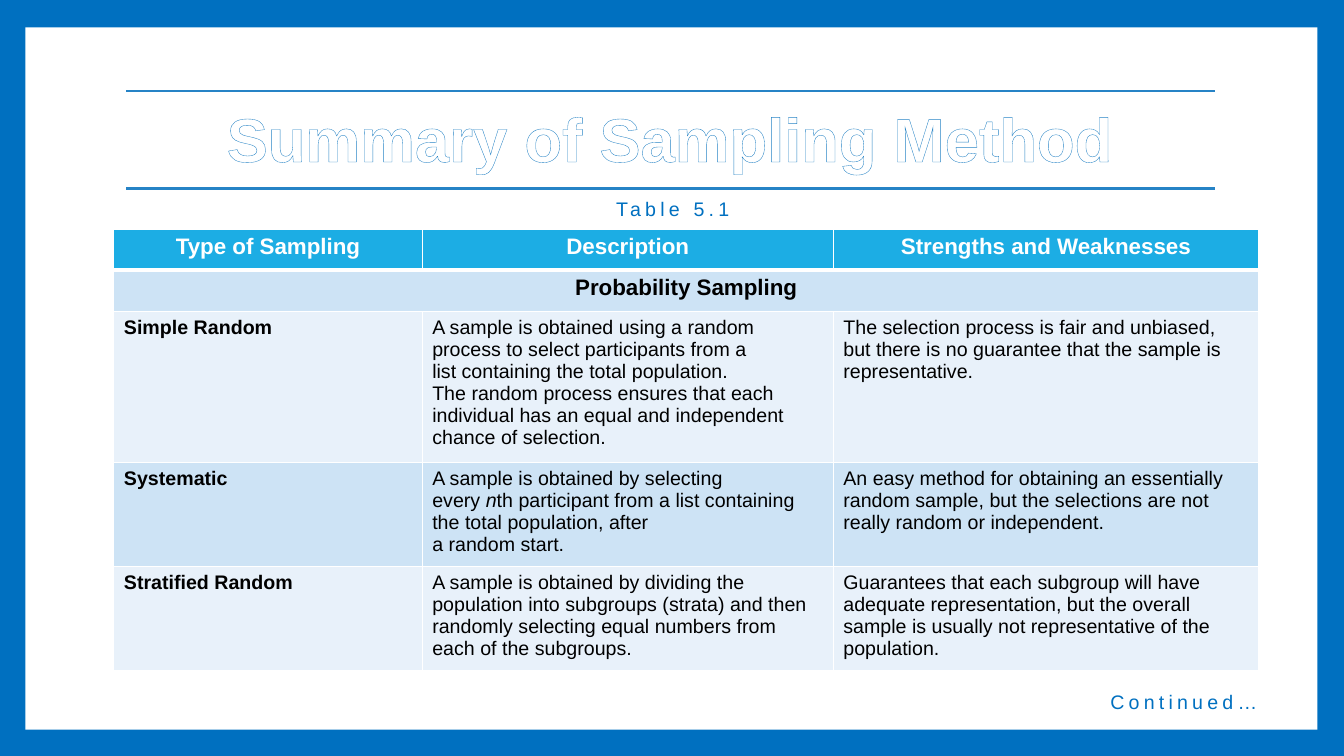
from dataclasses import dataclass

import lxml.etree
import pptx
import pptx.dml.color
import pptx.enum.shapes
import pptx.enum.text
import pptx.oxml
import pptx.oxml.ns
import pptx.util

Cm = pptx.util.Cm
Pt = pptx.util.Pt
RGBColor = pptx.dml.color.RGBColor
CENTER = pptx.enum.text.PP_ALIGN.CENTER
LEFT = pptx.enum.text.PP_ALIGN.LEFT

FONT = "Arial"
WHITE = RGBColor(0xFF, 0xFF, 0xFF)
BLACK = RGBColor(0, 0, 0)
FRAME_BLUE = RGBColor(0x00, 0x70, 0xC0)
RULE_BLUE = RGBColor(0x26, 0x83, 0xC6)
HEADER_BLUE = RGBColor(0x1C, 0xAD, 0xE4)
BAND_DARK = RGBColor(0xCD, 0xE3, 0xF5)
BAND_LIGHT = RGBColor(0xE8, 0xF1, 0xFA)

RULE_LEFT, RULE_RIGHT = 3.18, 30.61
RULE_HEIGHTS = (4.75, 2.29)
COLUMN_WIDTHS = (7.77, 10.36, 10.72)


@dataclass
class Caption:
    text: str
    left: float
    top: float


@dataclass
class TableRow:
    height: float
    fill: RGBColor
    cells: tuple[str, ...]
    heading: bool = False
    color: RGBColor = BLACK


CAPTIONS = (Caption("Table 5.1", 12.8, 4.83), Caption("Continued…", 25.68, 17.27))

ROWS = (
    TableRow(1.04, HEADER_BLUE,
             ("Type of Sampling", "Description", "Strengths and Weaknesses"), True, WHITE),
    TableRow(1.04, BAND_DARK, ("Probability Sampling",), True),
    TableRow(3.81, BAND_LIGHT, (
        "Simple Random",
        "A sample is obtained using a random\n"
        "process to select participants from a\n"
        "list containing the total population.\n"
        "The random process ensures that each individual has an equal and "
        "independent chance of selection.",
        "The selection process is fair and unbiased, but there is no guarantee "
        "that the sample is representative.")),
    TableRow(2.62, BAND_DARK, (
        "Systematic",
        "A sample is obtained by selecting\n"
        "every *n*th participant from a list containing the total population, after\n"
        "a random start.",
        "An easy method for obtaining an essentially random sample, but the "
        "selections are not really random or independent.")),
    TableRow(2.62, BAND_LIGHT, (
        "Stratified Random",
        "A sample is obtained by dividing the population into subgroups (strata) "
        "and then randomly selecting equal numbers from each of the subgroups.",
        "Guarantees that each subgroup will have adequate representation, but the "
        "overall sample is usually not representative of the population.")),
)


def format_run(run, size: float, color: RGBColor, bold: bool = False) -> None:
    run.font.name = FONT
    run.font.size = Pt(size)
    run.font.bold = bold
    run.font.color.rgb = color


def line_element(tag: str, width: float, color: RGBColor):
    namespace = pptx.oxml.ns.nsdecls("a")
    return pptx.oxml.parse_xml(
        f'<a:{tag} {namespace} w="{int(Pt(width))}"><a:solidFill>'
        f'<a:srgbClr val="{color}"/></a:solidFill></a:{tag}>')


def add_panel(slide) -> None:
    panel = slide.shapes.add_shape(pptx.enum.shapes.MSO_SHAPE.RECTANGLE,
                                   Cm(0.64), Cm(0.69), Cm(32.56), Cm(17.7))
    panel.shadow.inherit = False
    panel.fill.solid()
    panel.fill.fore_color.rgb = WHITE
    panel.line.fill.background()
    slide.shapes.title.element.addprevious(panel.element)


def format_title(slide) -> None:
    title = slide.shapes.title
    title.left, title.top, title.width, title.height = Cm(3.18), Cm(1.7), Cm(27.43), Cm(3.76)
    text_frame = title.text_frame
    text_frame.text = "Summary of Sampling Method"
    text_frame.word_wrap = True
    text_frame.auto_size = pptx.enum.text.MSO_AUTO_SIZE.NONE
    text_frame.vertical_anchor = pptx.enum.text.MSO_ANCHOR.MIDDLE
    paragraph = text_frame.paragraphs[0]
    paragraph.alignment = CENTER
    paragraph.line_spacing = 0.9
    run = paragraph.runs[0]
    format_run(run, 44, WHITE, True)
    run.font._element.insert(0, line_element("ln", 0.52, RULE_BLUE))


def add_rule(slide, height: float) -> None:
    rule = slide.shapes.add_connector(pptx.enum.shapes.MSO_CONNECTOR.STRAIGHT,
                                      Cm(RULE_LEFT), Cm(height), Cm(RULE_RIGHT), Cm(height))
    rule.line.color.rgb = RULE_BLUE
    rule.line.width = Pt(1.5)
    lxml.etree.SubElement(rule.element.spPr, pptx.oxml.ns.qn("a:effectLst"))


def add_caption(slide, caption: Caption) -> None:
    box = slide.shapes.add_textbox(Cm(caption.left), Cm(caption.top), Cm(8.18), Cm(0.86))
    text_frame = box.text_frame
    text_frame.text = caption.text
    text_frame.word_wrap = True
    text_frame.auto_size = pptx.enum.text.MSO_AUTO_SIZE.SHAPE_TO_FIT_TEXT
    paragraph = text_frame.paragraphs[0]
    paragraph.alignment = CENTER
    paragraph._p.get_or_add_pPr().set("marL", str(int(Cm(0.13))))
    run = paragraph.runs[0]
    format_run(run, 14, FRAME_BLUE)
    run.font._element.set("spc", "300")


def fill_cell(cell, text: str, row: TableRow, bold: bool) -> None:
    text_frame = cell.text_frame
    for index, line in enumerate(text.split("\n")):
        paragraph = text_frame.add_paragraph() if index else text_frame.paragraphs[0]
        paragraph.alignment = CENTER if row.heading else LEFT
        for part, words in enumerate(line.split("*")):
            run = paragraph.add_run()
            run.text = words
            format_run(run, 16 if row.heading else 14, row.color, bold)
            run.font.italic = part % 2 == 1


def style_cell(cell, fill: RGBColor, row_index: int) -> None:
    cell.fill.solid()
    cell.fill.fore_color.rgb = fill
    properties = cell._tc.get_or_add_tcPr()
    widths = {"lnL": 1, "lnR": 1, "lnT": 3 if row_index == 1 else 1,
              "lnB": 3 if row_index == 0 else 1}
    for position, (tag, width) in enumerate(widths.items()):
        properties.insert(position, line_element(tag, width, WHITE))


def add_sampling_table(slide) -> None:
    table = slide.shapes.add_table(
        len(ROWS), len(COLUMN_WIDTHS), Cm(2.87), Cm(5.77),
        Cm(sum(COLUMN_WIDTHS)), Cm(sum(row.height for row in ROWS))).table
    for column, width in zip(table.columns, COLUMN_WIDTHS):
        column.width = Cm(width)
    for row_index, row in enumerate(ROWS):
        table.rows[row_index].height = Cm(row.height)
        for column_index in range(len(COLUMN_WIDTHS)):
            style_cell(table.cell(row_index, column_index), row.fill, row_index)
        if len(row.cells) == 1:
            table.cell(row_index, 0).merge(table.cell(row_index, len(COLUMN_WIDTHS) - 1))
        for column_index, text in enumerate(row.cells):
            fill_cell(table.cell(row_index, column_index), text, row,
                      row.heading or column_index == 0)


def main() -> None:
    presentation = pptx.Presentation()
    presentation.slide_width, presentation.slide_height = Cm(33.87), Cm(19.05)
    slide = presentation.slides.add_slide(presentation.slide_layouts.get_by_name("Title Only"))
    slide.background.fill.solid()
    slide.background.fill.fore_color.rgb = FRAME_BLUE
    add_panel(slide)
    format_title(slide)
    for height in RULE_HEIGHTS:
        add_rule(slide, height)
    add_sampling_table(slide)
    for caption in CAPTIONS:
        add_caption(slide, caption)
    presentation.save("out.pptx")


if __name__ == "__main__":
    main()
